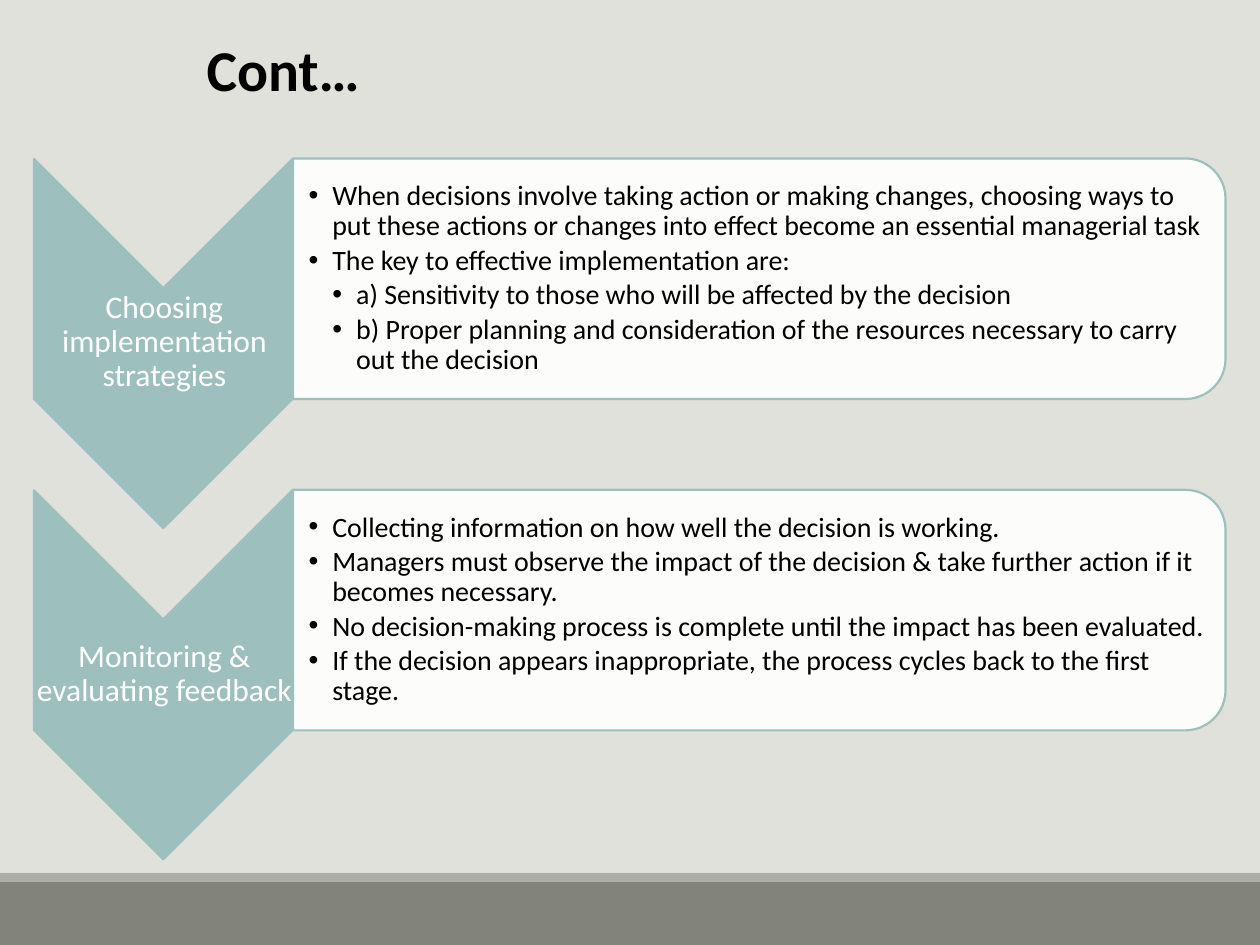
"""Build a slide with two decision-making steps, each a chevron beside a bulleted card."""
from lxml import etree
from pptx import Presentation
from pptx.dml.color import RGBColor
from pptx.enum.shapes import MSO_SHAPE as Shape
from pptx.enum.text import MSO_ANCHOR as Anchor, MSO_AUTO_SIZE as AutoSize, PP_ALIGN as Align
from pptx.oxml.ns import qn
from pptx.util import Cm, Pt

color = RGBColor.from_string


def add_box(slide, kind, box, fill, line=None):
    shape = slide.shapes.add_shape(kind, *map(Cm, box))
    shape.shadow.inherit = False
    shape.fill.solid()
    shape.fill.fore_color.rgb = color(fill)
    if line:
        shape.line.color.rgb = color(line)
        shape.line.width = Pt(1.25)
    else:
        shape.line.fill.background()
    return shape


def write(shape, box, items, frame_format, paragraph_format, font_format, font_color):
    shape.left, shape.top, shape.width, shape.height = map(Cm, box)
    frame = shape.text_frame
    frame.text = "\n".join(text for text, level in items)
    for name, value in frame_format.items():
        setattr(frame, name, value)
    for paragraph, (text, level) in zip(frame.paragraphs, items):
        paragraph.level = level
        for name, value in paragraph_format.items():
            setattr(paragraph, name, value)
        for name, value in font_format.items():
            setattr(paragraph.runs[0].font, name, value)
        paragraph.runs[0].font.color.rgb = color(font_color)


TEAL = "9DBFBE"
STEP_PITCH = 6.68
STEPS = [
    ("Choosing implementation strategies", [
        ("When decisions involve taking action or making changes, choosing ways to put "
         "these actions or changes into effect become an essential managerial task", 0),
        ("The key to effective implementation are:", 0),
        ("a) Sensitivity to those who will be affected by the decision", 1),
        ("b) Proper planning and consideration of the resources necessary to carry "
         "out the decision", 1),
    ]),
    ("Monitoring & evaluating feedback", [
        ("Collecting information on how well the decision is working.", 0),
        ("Managers must observe the impact of the decision & take further action if it "
         "becomes necessary.", 0),
        ("No decision-making process is complete until the impact has been evaluated.", 0),
        ("If the decision appears inappropriate, the process cycles back to the first stage.", 0),
    ]),
]
BASE_FRAME = dict(word_wrap=True, auto_size=AutoSize.NONE, vertical_anchor=Anchor.MIDDLE)
TIGHT_FRAME = dict(BASE_FRAME, margin_left=Cm(0.03), margin_right=Cm(0.03),
                   margin_top=Cm(0.03), margin_bottom=Cm(0.03))
LIST_FRAME = dict(TIGHT_FRAME, margin_left=Cm(0.3))
TITLE_PARAGRAPH = dict(alignment=Align.LEFT)
LABEL_PARAGRAPH = dict(alignment=Align.CENTER, line_spacing=0.9, space_after=Pt(6.3))
LIST_PARAGRAPH = dict(alignment=Align.LEFT, line_spacing=0.9, space_before=Pt(0),
                      space_after=Pt(2.4))
TITLE_FONT = dict(name="Calibri", size=Pt(33), bold=True)
LABEL_FONT = dict(name="Calibri", size=Pt(18))
LIST_FONT = dict(name="Calibri", size=Pt(16))

presentation = Presentation()
presentation.slide_width, presentation.slide_height = Cm(25.4), Cm(19.05)
slide = presentation.slides.add_slide(presentation.slide_layouts.get_by_name("Two Content"))
slide.background.fill.solid()
slide.background.fill.fore_color.rgb = color("E1E1DB")
title, *lists = slide.placeholders

add_box(slide, Shape.RECTANGLE, (0, 17.78, 25.4, 1.27), "82847C")
add_box(slide, Shape.RECTANGLE, (0, 17.6, 25.4, 0.18), "ACADA8")
write(title, (3.91, 0.53, 8.41, 1.68), [("Cont…", 0)],
      BASE_FRAME, TITLE_PARAGRAPH, TITLE_FONT, "000000")

for index, ((label_text, items), body) in enumerate(zip(STEPS, lists)):
    offset = index * STEP_PITCH
    chevron = add_box(slide, Shape.CHEVRON, (-0.43, 4.32 + offset, 7.44, 5.21), TEAL, TEAL)
    chevron.rotation = 90
    label_box = (0.71, 5.79 + offset, 5.21, 2.24)
    label = slide.shapes.add_textbox(*map(Cm, label_box))
    write(label, label_box, [(label_text, 0)],
          TIGHT_FRAME, LABEL_PARAGRAPH, LABEL_FONT, "FFFFFF")

    card = add_box(slide, Shape.ROUND_2_SAME_RECTANGLE,
                   (12.88, -3.78 + offset, 4.85, 18.8), "FFFFFF", TEAL)
    card.rotation = 90
    card_color = card.element.spPr.find(qn("a:solidFill")).find(qn("a:srgbClr"))
    etree.SubElement(card_color, qn("a:alpha"), val="90000")

    write(body, (5.92, 3.43 + offset, 18.54, 4.37), items,
          LIST_FRAME, LIST_PARAGRAPH, LIST_FONT, "000000")
    for paragraph in body.text_frame.paragraphs:
        properties = paragraph._p.get_or_add_pPr()
        properties.set("marL", str(Cm(0.48 * (paragraph.level + 1))))
        properties.set("indent", str(Cm(-0.48)))
        etree.SubElement(properties, qn("a:buFont"), typeface="Arial")
        etree.SubElement(properties, qn("a:buChar"), char="•")
    card.element.addnext(body.element)

presentation.save("out.pptx")
